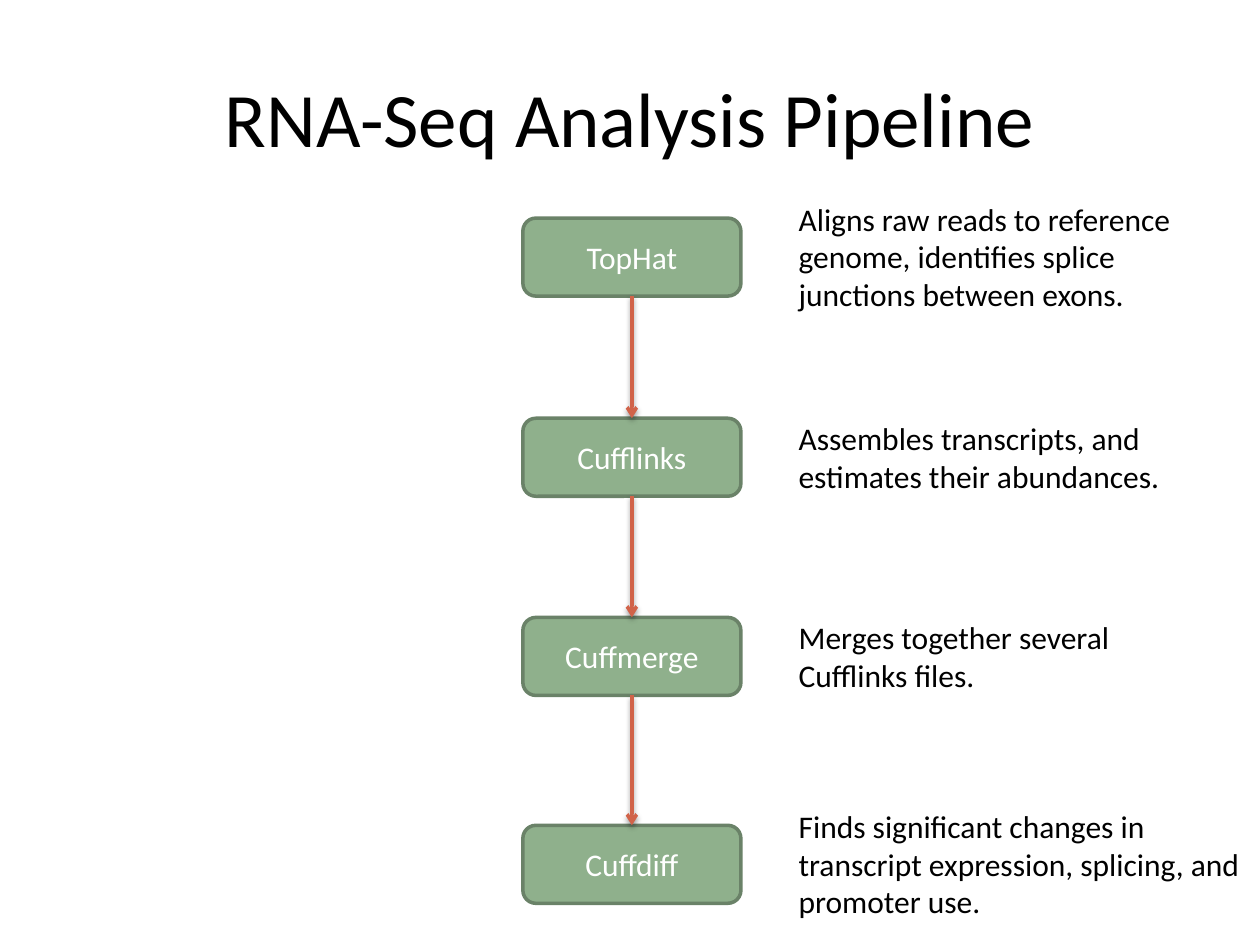
from dataclasses import dataclass

from lxml import etree
from pptx import Presentation
from pptx.dml.color import RGBColor as RGB
from pptx.enum.shapes import MSO_CONNECTOR as CONN, MSO_SHAPE as SHAPE
from pptx.enum.text import MSO_ANCHOR as ANCHOR, MSO_AUTO_SIZE as FIT, PP_ALIGN as ALIGN
from pptx.oxml import parse_xml
from pptx.oxml.ns import nsdecls, qn
from pptx.util import Pt


@dataclass(frozen=True)
class Theme:
    font: str = "Calibri"
    title_size: int = 44
    body_size: int = 18
    line_width: int = 2
    text: RGB = RGB(0, 0, 0)
    box_text: RGB = RGB(255, 255, 255)
    box_fill: RGB = RGB(0x8F, 0xB0, 0x8C)
    box_line: RGB = RGB(0x6A, 0x82, 0x68)
    arrow: RGB = RGB(0xD1, 0x63, 0x49)


THEME = Theme()
STEP_W, STEP_H = 124.6, 44.6
NOTE_X = 150.5  # offset of the notes from the left of the boxes
LINE_H, INSETS = 21.6, 7.9

# Name, top within the region, description, its width and line count
STEPS = [
    ("TopHat", 0,
     "Aligns raw reads to reference genome, identifies splice junctions between exons.", 261.4, 3),
    ("Cufflinks", 114.4,
     "Assembles transcripts, and estimates their abundances.", 223.2, 2),
    ("Cuffmerge", 228.2,
     "Merges together several Cufflinks files.", 251.3, 2),
    ("Cuffdiff", 347,
     "Finds significant changes in transcript expression, splicing, and promoter use.", 270.7, 3),
]


def set_text(tf, text, size, color, align):
    tf.text = text
    tf.word_wrap = True
    p = tf.paragraphs[0]
    p.alignment = align
    font = p.runs[0].font
    font.name, font.size = THEME.font, Pt(size)
    font.color.rgb = color


def add_title(s, x, y, w, h, text):
    sp = s.shapes.title
    sp.left, sp.top, sp.width, sp.height = Pt(x), Pt(y), Pt(w), Pt(h)
    set_text(sp.text_frame, text, THEME.title_size, THEME.text, ALIGN.CENTER)
    sp.text_frame.vertical_anchor = ANCHOR.MIDDLE


def add_step(s, x, y, name):
    sp = s.shapes.add_shape(SHAPE.ROUNDED_RECTANGLE, Pt(x), Pt(y), Pt(STEP_W), Pt(STEP_H))
    sp.shadow.inherit = False
    sp.fill.solid()
    sp.fill.fore_color.rgb = THEME.box_fill
    sp.line.color.rgb = THEME.box_line
    sp.line.width = Pt(THEME.line_width)
    set_text(sp.text_frame, name, THEME.body_size, THEME.box_text, ALIGN.CENTER)
    sp.text_frame.vertical_anchor = ANCHOR.MIDDLE
    return sp


def add_note(s, x, mid_y, w, lines, text):
    h = lines * LINE_H + INSETS
    sp = s.shapes.add_textbox(Pt(x), Pt(mid_y - h / 2), Pt(w), Pt(h))
    set_text(sp.text_frame, text, THEME.body_size, THEME.text, ALIGN.LEFT)
    sp.text_frame.auto_size = FIT.SHAPE_TO_FIT_TEXT


def add_arrow(s, upper, lower):
    c = s.shapes.add_connector(CONN.STRAIGHT, 0, 0, 0, 0)
    c.begin_connect(upper, 2)
    c.end_connect(lower, 0)
    c.line.color.rgb = THEME.arrow
    c.line.width = Pt(THEME.line_width)
    # Arrowhead and soft shadow
    sp_pr = c._element.spPr
    etree.SubElement(sp_pr.find(qn("a:ln")), qn("a:tailEnd"), type="arrow")
    sp_pr.append(parse_xml(
        f'<a:effectLst {nsdecls("a")}>'
        f'<a:outerShdw blurRad="{Pt(3.1)}" dist="{Pt(1.6)}" dir="5400000" rotWithShape="0">'
        '<a:srgbClr val="000000"><a:alpha val="38000"/></a:srgbClr>'
        '</a:outerShdw></a:effectLst>'))


def add_pipeline(s, x, y, steps):
    # Boxes down the left, each note centred on its box
    boxes = []
    for name, top, note, note_w, lines in steps:
        boxes.append(add_step(s, x, y + top, name))
        add_note(s, x + NOTE_X, y + top + STEP_H / 2, note_w, lines, note)
    for upper, lower in zip(boxes, boxes[1:]):
        add_arrow(s, upper, lower)


def main():
    prs = Presentation()
    prs.slide_width, prs.slide_height = Pt(720), Pt(540)
    s = prs.slides.add_slide(prs.slide_layouts[5])
    add_title(s, 36, 21.6, 648, 90, "RNA-Seq Analysis Pipeline")
    add_pipeline(s, 298.8, 124.6, STEPS)
    prs.save("out.pptx")


if __name__ == "__main__":
    main()
